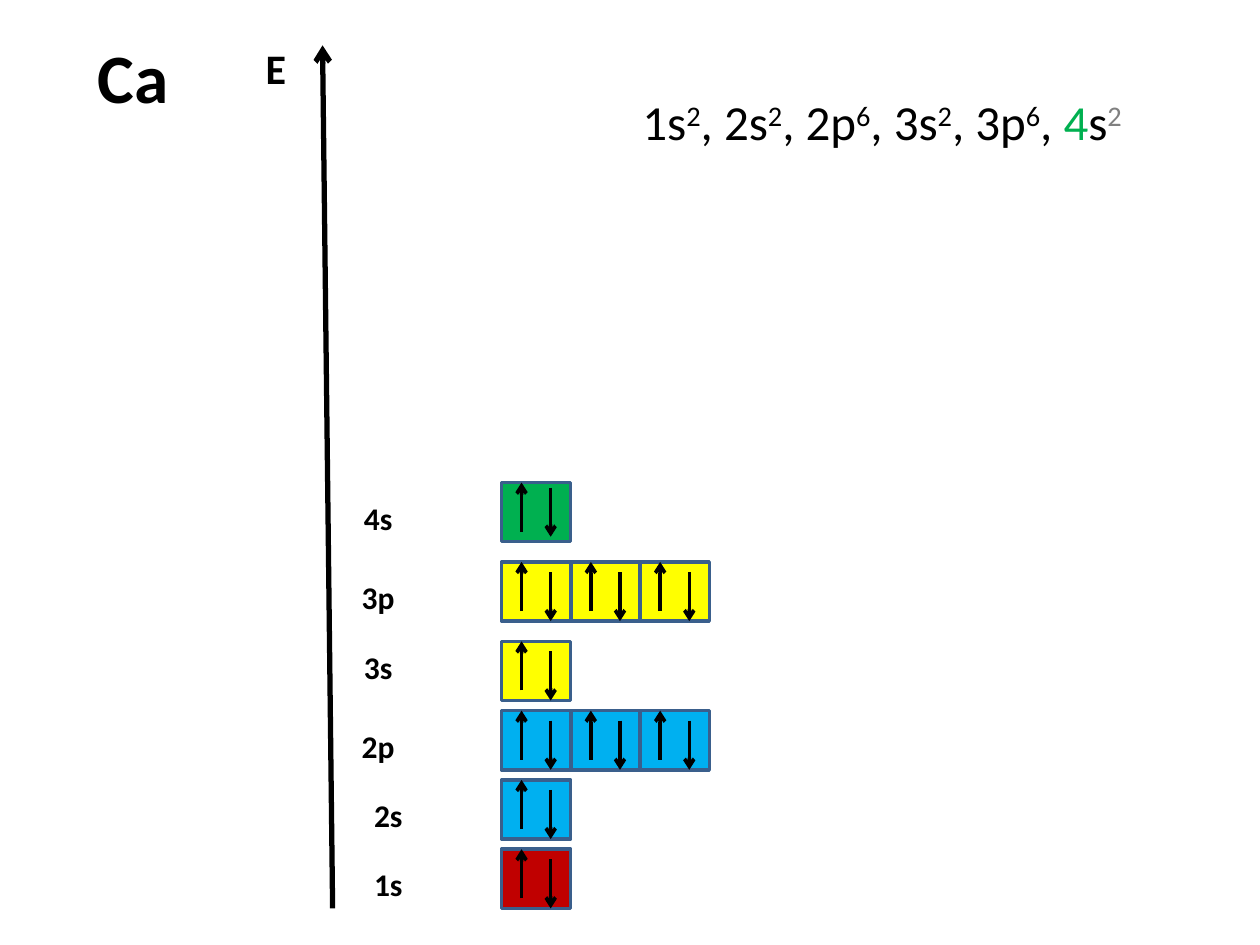
from lxml import etree
from pptx import Presentation
from pptx.dml.color import RGBColor
from pptx.enum.shapes import MSO_CONNECTOR, MSO_SHAPE
from pptx.enum.text import MSO_ANCHOR, PP_ALIGN
from pptx.oxml.ns import qn
from pptx.util import Inches, Pt

STRAIGHT, RECTANGLE = MSO_CONNECTOR.STRAIGHT, MSO_SHAPE.RECTANGLE
LEFT, CENTER = PP_ALIGN.LEFT, PP_ALIGN.CENTER
TOP, MIDDLE = MSO_ANCHOR.TOP, MSO_ANCHOR.MIDDLE

BLACK = RGBColor(0x00, 0x00, 0x00)
GRAY = RGBColor(0x80, 0x80, 0x80)
RED = RGBColor(0xC0, 0x00, 0x00)
BLUE = RGBColor(0x00, 0xB0, 0xF0)
YELLOW = RGBColor(0xFF, 0xFF, 0x00)
GREEN = RGBColor(0x00, 0xB0, 0x50)
BORDER = RGBColor(0x3A, 0x5F, 0x8C)

CELL_WIDTH, CELL_HEIGHT = 0.55, 0.47
CELLS_LEFT = 3.98
STEP = 0.08  # small grid step, in inches
LABEL_WIDTH, LABEL_HEIGHT = 0.94, 0.4

# name, cell top, cell count, fill, label left, label drop, down-arrow drop
LEVELS = [
    ("4s", 3.83, 1, GREEN, 2.56, STEP, STEP / 2),
    ("3p", 4.46, 3, YELLOW, 2.56, STEP, STEP),
    ("3s", 5.09, 1, YELLOW, 2.56, 0, STEP),
    ("2p", 5.64, 3, BLUE, 2.56, STEP, STEP),
    ("2s", 6.19, 1, BLUE, 2.64, STEP, STEP),
    ("1s", 6.74, 1, RED, 2.64, STEP, STEP),
]

# base text, electron count, base colour, count colour
CONFIGURATION = [
    ("1s", "2"), (", 2s", "2"), (", 2p", "6"), (", 3s", "2"), (", 3p", "6"),
]


def add_span(para, text, size, bold=False, color=BLACK, raised=False):
    span = para.add_run()
    span.text = text
    style = {"name": "Calibri", "size": Pt(size), "bold": bold}
    for key, value in style.items():
        setattr(span.font, key, value)
    span.font.color.rgb = color
    if raised:
        span._r.get_or_add_rPr().set("baseline", "30000")


def add_text_box(page, box, align=LEFT, anchor=TOP, wrap=True):
    """Add an empty text box and return its first paragraph."""
    frame = page.shapes.add_textbox(*map(Inches, box)).text_frame
    frame.word_wrap = wrap
    frame.vertical_anchor = anchor
    para = frame.paragraphs[0]
    para.alignment = align
    return para


def add_arrow(page, start, end, weight):
    arrow = page.shapes.add_connector(STRAIGHT, *map(Inches, (*start, *end)))
    arrow.line.color.rgb = BLACK
    arrow.line.width = Pt(weight)
    etree.SubElement(arrow.line._get_or_add_ln(), qn("a:tailEnd"), type="arrow")
    etree.SubElement(arrow._element.spPr, qn("a:effectLst"))


def add_orbital(page, box, fill, down_drop):
    """Add one cell holding an up and a down electron."""
    left, top, width, height = box
    cell = page.shapes.add_shape(RECTANGLE, *map(Inches, box))
    cell.shadow.inherit = False
    cell.fill.solid()
    cell.fill.fore_color.rgb = fill
    cell.line.color.rgb = BORDER
    cell.line.width = Pt(2)

    up_x, down_x = left + 0.29 * width, left + 0.71 * width
    length = height - STEP
    add_arrow(page, (up_x, top + length), (up_x, top), 2)
    down_top = top + down_drop
    add_arrow(page, (down_x, down_top), (down_x, down_top + length), 2)


def add_level(page, name, top, count, fill, label_left, label_drop, down_drop):
    label_box = (label_left, top + label_drop, LABEL_WIDTH, LABEL_HEIGHT)
    add_span(add_text_box(page, label_box, CENTER), name + " ", 18, bold=True)
    for column in range(count):
        left = CELLS_LEFT + column * CELL_WIDTH
        add_orbital(page, (left, top, CELL_WIDTH, CELL_HEIGHT), fill, down_drop)


def add_energy_axis(page, box):
    left, top, width, height = box
    add_arrow(page, (left + width, top + height), (left, top), 3)
    label = add_text_box(page, (left - 0.55, top - 0.07, 0.36, 0.5), wrap=False)
    add_span(label, "E", 24, bold=True)


def add_configuration(page, box):
    para = add_text_box(page, box)
    for base, count in CONFIGURATION:
        add_span(para, base, 28)
        add_span(para, count, 28, raised=True)
    add_span(para, ", ", 28)
    add_span(para, "4", 28, color=GREEN)
    add_span(para, "s", 28)
    add_span(para, "2", 28, color=GRAY, raised=True)


def add_title(page, box):
    add_span(add_text_box(page, box, CENTER, MIDDLE), "Ca", 39.6, bold=True)


def main():
    deck = Presentation()
    deck.slide_width, deck.slide_height = Inches(10), Inches(7.5)
    page = deck.slides.add_slide(deck.slide_layouts[6])
    add_title(page, (0.5, 0.3, 1.11, 0.61))
    add_energy_axis(page, (2.56, 0.36, 0.08, 6.85))
    add_configuration(page, (5, 0.68, 4.25, 0.57))
    for level in LEVELS:
        add_level(page, *level)
    deck.save("out.pptx")


if __name__ == "__main__":
    main()
